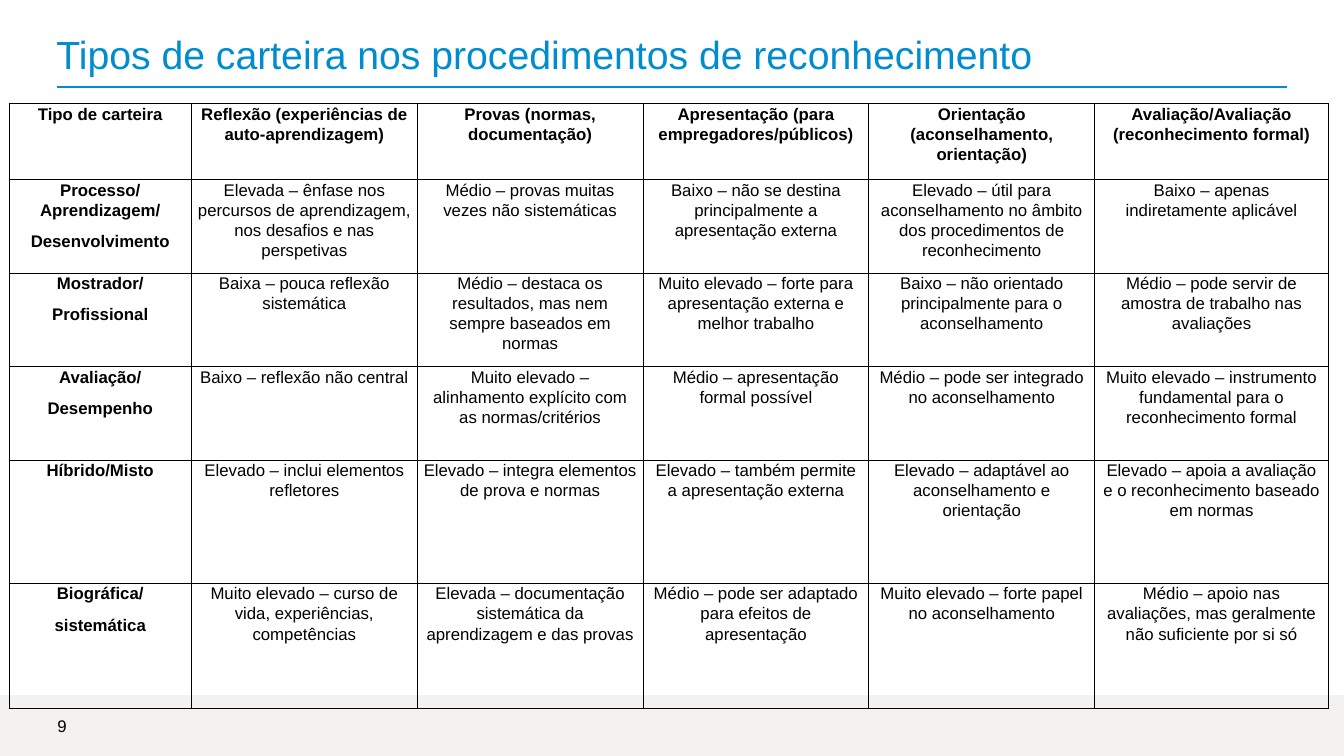
import lxml.etree
import pptx
import pptx.dml.color
import pptx.enum.shapes
import pptx.enum.text
import pptx.oxml
import pptx.oxml.ns
import pptx.util

Pt = pptx.util.Pt
BLUE = pptx.dml.color.RGBColor(0x00, 0x8D, 0xD0)
BLACK = pptx.dml.color.RGBColor(0x00, 0x00, 0x00)
TAUPE = pptx.dml.color.RGBColor(0x8A, 0x86, 0x7A)
FONT = "Arial"
COLUMN_WIDTHS = [130.3, 161.3, 161.3, 161.3, 161.3, 167]
ROW_HEIGHTS = [54, 66.8, 66.8, 66.8, 88, 89.3]
ROWS = [
    ["Tipo de carteira", "Reflexão (experiências de auto-aprendizagem)",
     "Provas (normas, documentação)", "Apresentação (para empregadores/públicos)",
     "Orientação (aconselhamento, orientação)", "Avaliação/Avaliação (reconhecimento formal)"],
    ["Processo/Aprendizagem/\nDesenvolvimento",
     "Elevada – ênfase nos percursos de aprendizagem, nos desafios e nas perspetivas",
     "Médio – provas muitas vezes não sistemáticas",
     "Baixo – não se destina principalmente a apresentação externa",
     "Elevado – útil para aconselhamento no âmbito dos procedimentos de reconhecimento",
     "Baixo – apenas indiretamente aplicável"],
    ["Mostrador/\nProfissional", "Baixa – pouca reflexão sistemática",
     "Médio – destaca os resultados, mas nem sempre baseados em normas",
     "Muito elevado – forte para apresentação externa e melhor trabalho",
     "Baixo – não orientado principalmente para o aconselhamento",
     "Médio – pode servir de amostra de trabalho nas avaliações"],
    ["Avaliação/\nDesempenho", "Baixo – reflexão não central",
     "Muito elevado – alinhamento explícito com as normas/critérios",
     "Médio – apresentação formal possível",
     "Médio – pode ser integrado no aconselhamento",
     "Muito elevado – instrumento fundamental para o reconhecimento formal"],
    ["Híbrido/Misto", "Elevado – inclui elementos refletores",
     "Elevado – integra elementos de prova e normas",
     "Elevado – também permite a apresentação externa",
     "Elevado – adaptável ao aconselhamento e orientação",
     "Elevado – apoia a avaliação e o reconhecimento baseado em normas"],
    ["Biográfica/\nsistemática", "Muito elevado – curso de vida, experiências, competências",
     "Elevada – documentação sistemática da aprendizagem e das provas",
     "Médio – pode ser adaptado para efeitos de apresentação",
     "Muito elevado – forte papel no aconselhamento",
     "Médio – apoio nas avaliações, mas geralmente não suficiente por si só"],
]


def format_runs(paragraph, size, color, bold=False):
    for run in paragraph.runs:
        run.font.name = FONT
        run.font.size = Pt(size)
        run.font.bold = bold
        run.font.color.rgb = color


def write_label(shape, text, size, color):
    frame = shape.text_frame
    frame.text = text
    frame.word_wrap = True
    frame.auto_size = pptx.enum.text.MSO_AUTO_SIZE.NONE
    frame.vertical_anchor = pptx.enum.text.MSO_ANCHOR.MIDDLE
    frame.margin_left = frame.margin_right = frame.margin_top = frame.margin_bottom = 0
    paragraph = frame.paragraphs[0]
    paragraph.alignment = pptx.enum.text.PP_ALIGN.LEFT
    format_runs(paragraph, size, color)


def add_title(slide, text):
    title = slide.shapes.title
    title.left, title.top, title.width, title.height = Pt(40.3), Pt(20.2), Pt(828), Pt(36.7)
    write_label(title, text, 28, BLUE)


def add_rule(slide):
    rule = slide.shapes.add_connector(
        pptx.enum.shapes.MSO_CONNECTOR.STRAIGHT, Pt(41), Pt(62), Pt(919.4), Pt(62))
    rule.line.color.rgb = BLUE
    rule.line.width = Pt(1.25)
    lxml.etree.SubElement(rule._element.spPr, pptx.oxml.ns.qn("a:effectLst"))


def add_footer_band(slide):
    band = slide.shapes.add_shape(
        pptx.enum.shapes.MSO_SHAPE.RECTANGLE, 0, Pt(496.5), Pt(960), Pt(43.5))
    band.shadow.inherit = False
    band.fill.solid()
    band.fill.fore_color.rgb = TAUPE
    band.line.fill.background()
    color = band._element.spPr.find(".//" + pptx.oxml.ns.qn("a:srgbClr"))
    lxml.etree.SubElement(color, pptx.oxml.ns.qn("a:alpha"), val="10000")


def add_page_number(slide, number):
    box = slide.shapes.add_textbox(Pt(41), Pt(507), Pt(43), Pt(23))
    write_label(box, number, 12, BLACK)


def add_borders(cell):
    properties = cell._tc.get_or_add_tcPr()
    for side in ("lnL", "lnR", "lnT", "lnB"):
        properties.append(pptx.oxml.parse_xml(
            f'<a:{side} {pptx.oxml.ns.nsdecls("a")} w="{Pt(0.75)}"><a:solidFill>'
            f'<a:srgbClr val="{BLACK}"/></a:solidFill></a:{side}>'))


def fill_cell(cell, text, bold):
    cell.margin_left = cell.margin_right = Pt(4.3)
    cell.margin_top = cell.margin_bottom = 0
    cell.vertical_anchor = pptx.enum.text.MSO_ANCHOR.TOP
    add_borders(cell)
    cell.fill.background()
    cell.text_frame.text = text
    for paragraph in cell.text_frame.paragraphs:
        paragraph.alignment = pptx.enum.text.PP_ALIGN.CENTER
        paragraph.line_spacing = 1.07
        paragraph.space_after = Pt(8)
        format_runs(paragraph, 12, BLACK, bold)


def add_portfolio_table(slide):
    table = slide.shapes.add_table(
        len(ROWS), len(COLUMN_WIDTHS), Pt(6.5), Pt(74.2),
        Pt(sum(COLUMN_WIDTHS)), Pt(sum(ROW_HEIGHTS))).table
    table.first_row = False
    table.horz_banding = False
    for column, width in zip(table.columns, COLUMN_WIDTHS):
        column.width = Pt(width)
    for row, height in zip(table.rows, ROW_HEIGHTS):
        row.height = Pt(height)
    for row_index, texts in enumerate(ROWS):
        for column_index, text in enumerate(texts):
            is_heading = row_index == 0 or column_index == 0
            fill_cell(table.cell(row_index, column_index), text, is_heading)


def main():
    """Build the slide that compares portfolio types."""
    presentation = pptx.Presentation()
    presentation.slide_width, presentation.slide_height = Pt(960), Pt(540)
    slide = presentation.slides.add_slide(presentation.slide_layouts[5])
    add_rule(slide)
    add_footer_band(slide)
    add_title(slide, "Tipos de carteira nos procedimentos de reconhecimento")
    add_page_number(slide, "9")
    add_portfolio_table(slide)
    presentation.save("out.pptx")


if __name__ == "__main__":
    main()
